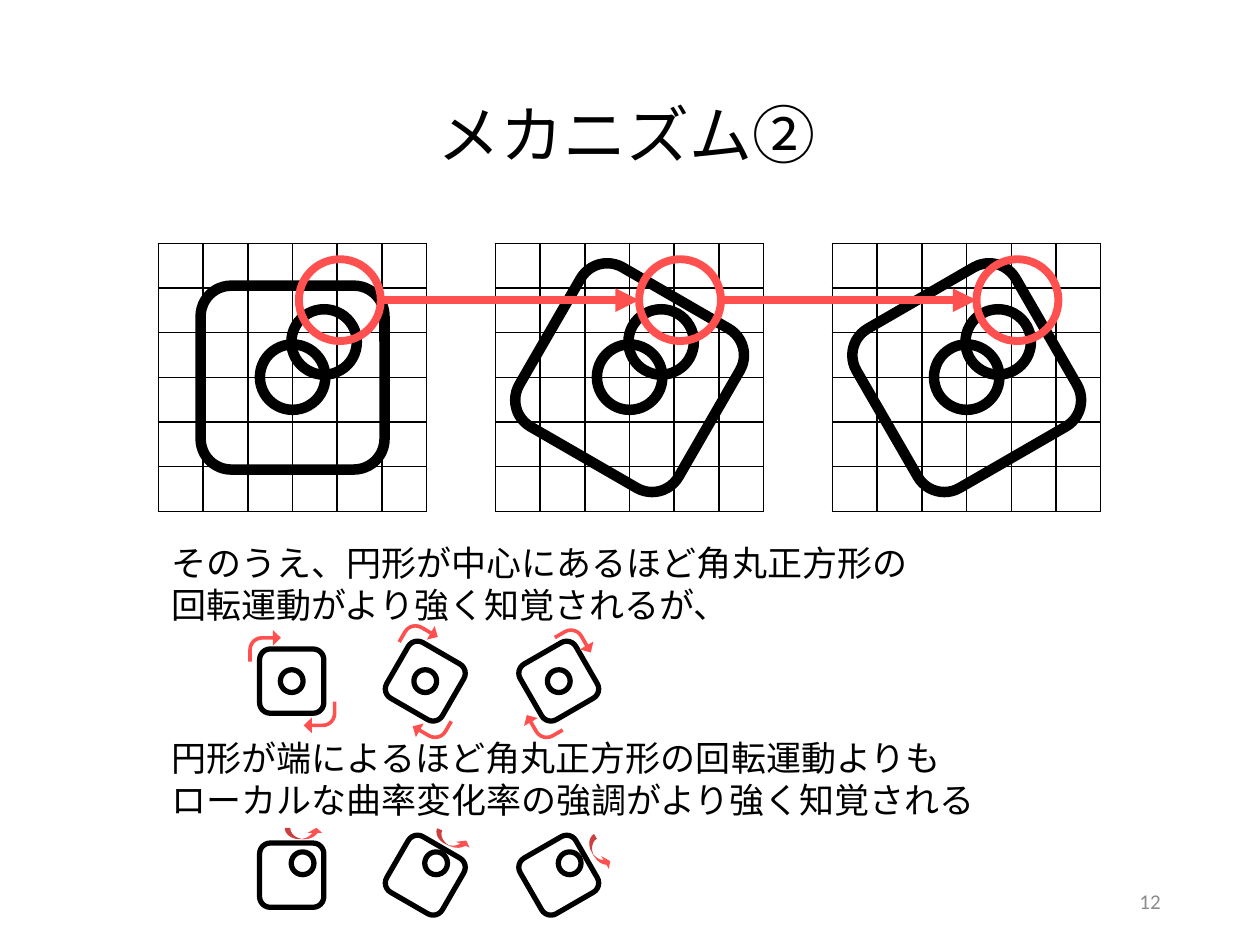
from lxml import etree
from pptx import Presentation
from pptx import util as u
from pptx.dml.color import RGBColor
from pptx.enum import shapes, text
from pptx.oxml.ns import qn

COLORS = {"black": "000000", "red": "FF5050", "gray": "8C8C8C"}
LATIN, JAPANESE = "Calibri", "Noto Sans CJK JP"
SHAPE = shapes.MSO_SHAPE
ALIGN = text.PP_ALIGN


def rgb(name):
    return RGBColor.from_string(COLORS[name])


class Deck:
    """Holds the style and the current slide; all lengths are in points."""

    def __init__(self, width, height):
        self.prs = Presentation()
        self.prs.slide_width, self.prs.slide_height = u.Pt(width), u.Pt(height)
        self.s = self.prs.slides.add_slide(self.prs.slide_layouts[6])

    def text(self, box, paragraphs, size, font, color="black", align=ALIGN.LEFT,
             anchor=text.MSO_ANCHOR.TOP, line=None):
        """Add a text box from (space before, string) paragraphs."""
        tf = self.s.shapes.add_textbox(*map(u.Pt, box)).text_frame
        tf.word_wrap = True
        tf.vertical_anchor = anchor
        for i, (gap, string) in enumerate(paragraphs):
            p = tf.add_paragraph() if i else tf.paragraphs[0]
            p.alignment = align
            p.space_before = u.Pt(gap)
            if line:
                p.line_spacing = u.Pt(line)
            r = p.add_run()
            r.text = string
            r.font.name, r.font.size = font, u.Pt(size)
            r.font.color.rgb = rgb(color)

    def shape(self, kind, cx, cy, w, h, rotation=0, adjust=()):
        """Add a preset shape by its centre, without fill or line."""
        sp = self.s.shapes.add_shape(
            kind, u.Pt(cx - w / 2), u.Pt(cy - h / 2), u.Pt(w), u.Pt(h))
        sp.shadow.inherit = False
        sp.rotation = rotation
        for i, value in enumerate(adjust):
            sp.adjustments[i] = value
        sp.fill.background()
        sp.line.fill.background()
        return sp

    def outline(self, kind, cx, cy, size, weight, color="black", rotation=0):
        sp = self.shape(kind, cx, cy, size, size, rotation)
        sp.line.color.rgb = rgb(color)
        sp.line.width = u.Pt(weight)

    def block_arrow(self, kind, cx, cy, w, h, rotation, adjust):
        sp = self.shape(kind, cx, cy, w, h, rotation, adjust)
        sp.fill.solid()
        sp.fill.fore_color.rgb = rgb("red")

    def arrow(self, x1, x2, y, weight):
        c = self.s.shapes.add_connector(
            shapes.MSO_CONNECTOR.STRAIGHT, u.Pt(x1), u.Pt(y), u.Pt(x2), u.Pt(y))
        c.line.color.rgb = rgb("red")
        c.line.width = u.Pt(weight)
        etree.SubElement(c.line._get_or_add_ln(), qn("a:tailEnd"), type="triangle")
        etree.SubElement(c._element.spPr, qn("a:effectLst"))

    def grid(self, left, top, size, n):
        """Add an empty n by n table with thin black borders."""
        table = self.s.shapes.add_table(
            n, n, u.Pt(left), u.Pt(top), u.Pt(size), u.Pt(size)).table
        table.first_row = table.horz_banding = False
        for i in range(n):
            table.columns[i].width = table.rows[i].height = u.Pt(size / n)
        for cell in table.iter_cells():
            cell.margin_top = cell.margin_bottom = 0
            p = cell.text_frame.paragraphs[0]._p
            etree.SubElement(p, qn("a:endParaRPr"), sz="800")
            tcPr = cell._tc.get_or_add_tcPr()
            for side in ("lnL", "lnR", "lnT", "lnB"):
                ln = etree.SubElement(tcPr, qn("a:" + side), w=str(u.Pt(1)))
                fill = etree.SubElement(ln, qn("a:solidFill"))
                etree.SubElement(fill, qn("a:srgbClr"), val=COLORS["black"])
            cell.fill.background()


def main():
    deck = Deck(720, 540)
    deck.text((47.5, 51.1, 620.6, 51.1), [(0, "メカニズム②")], 36, LATIN,
              align=ALIGN.CENTER)
    deck.text((90.7, 305.3, 594, 170), [
        (0, "そのうえ、円形が中心にあるほど角丸正方形の"),
        (0, "回転運動がより強く知覚されるが、"),
        (62.6, "円形が端によるほど角丸正方形の回転運動よりも"),
        (0, "ローカルな曲率変化率の強調がより強く知覚される"),
    ], 20, JAPANESE, line=24.4)

    angles = (0, 30, 60)

    # Three large panels, with the corner highlighted in each
    for i, angle in enumerate(angles):
        x, y = 167.2 + 192.6 * i, 215.8
        deck.grid(x - 76.7, 139, 153.4, 6)
        deck.outline(SHAPE.ROUNDED_RECTANGLE, x, y, 105.1, 6, rotation=angle)
        for dx, dy in ((0, -0.3), (18, -20.4)):
            deck.outline(SHAPE.OVAL, x + dx, y + dy, 37.4, 6)

    ring_xs, ring_y, ring = (194.2, 388.6, 581.4), 171.5, 46.8
    for x in ring_xs:
        deck.outline(SHAPE.OVAL, x, ring_y, ring, 4.5, "red")
    for start, end in zip(ring_xs, ring_xs[1:]):
        deck.arrow(start + ring / 2, end - ring / 2, ring_y, 4.5)

    # Two rows of small icons: circle in the centre, circle near the corner
    for y, dx, dy in ((389.2, 0, 0), (500.1, 6.2, -6.8)):
        for i, angle in enumerate(angles):
            x = 166.7 + 76.3 * i
            deck.outline(SHAPE.ROUNDED_RECTANGLE, x, y, 36.7, 3, rotation=angle)
            deck.outline(SHAPE.OVAL, x + dx, y + dy, 13, 3)

    turn_centers = (((151.2, 369), (239.8, 363.2), (329, 367)),
                    ((182.9, 410), (246.2, 415.8), (309.6, 414.4)))
    for half_turn, centers in zip((0, 180), turn_centers):
        for (x, y), angle in zip(centers, angles):
            deck.block_arrow(SHAPE.BENT_ARROW, x, y, 18.7, 18, angle + half_turn,
                             (0.117, 0.25, 0.257, 0.438))
    for x, y, angle in ((173.9, 476.3, 0), (258.8, 480.6, 22.9), (342.4, 487.8, 59.2)):
        deck.block_arrow(SHAPE.CURVED_UP_ARROW, x, y, 22.3, 6.5, angle,
                         (0.481, 1.299, 0.455))

    deck.text((508.3, 500.4, 162, 28.8), [(0, "12")], 12, LATIN, "gray",
              ALIGN.RIGHT, text.MSO_ANCHOR.MIDDLE)
    deck.prs.save("out.pptx")


if __name__ == "__main__":
    main()
